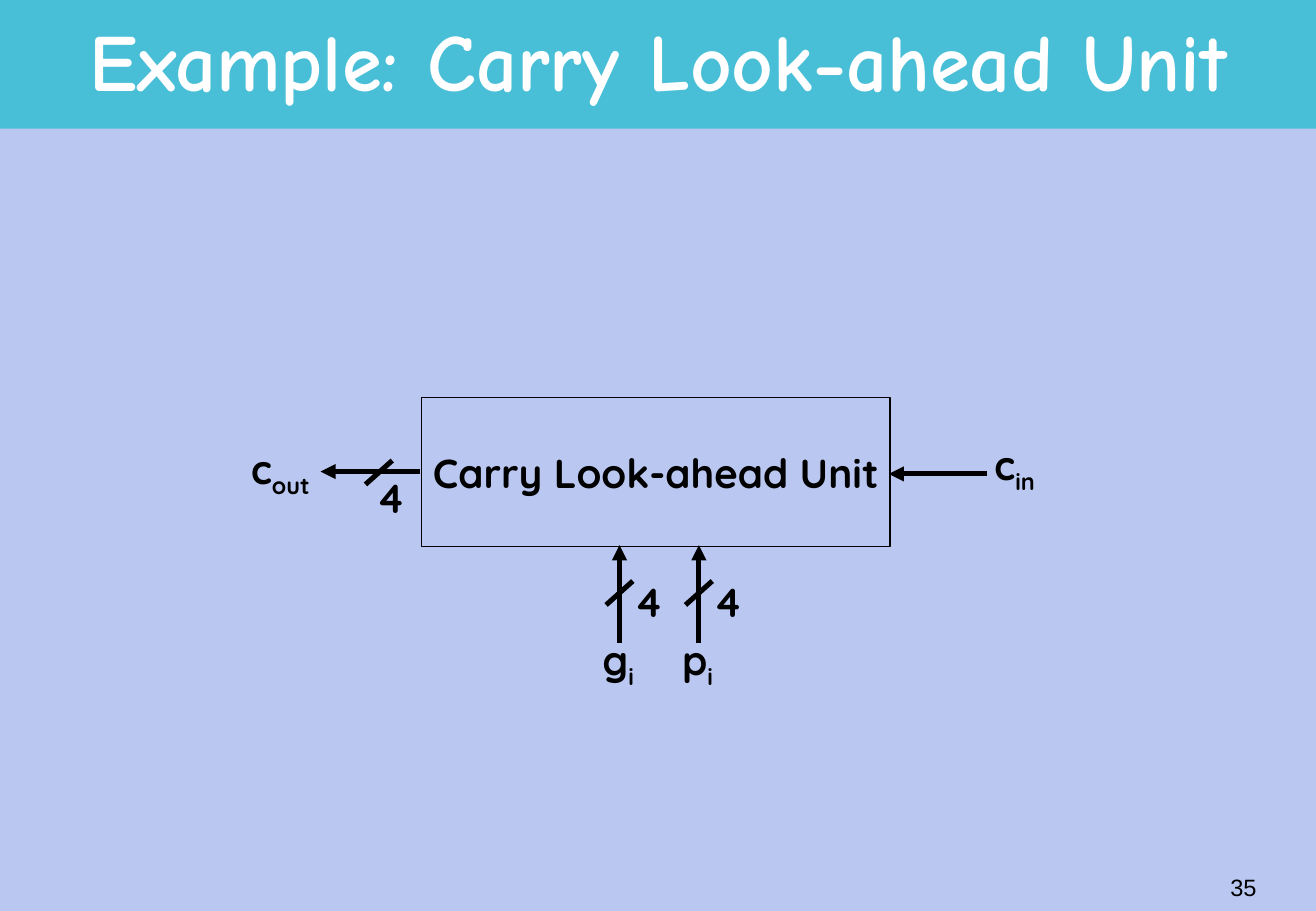
from lxml import etree
from pptx import Presentation
from pptx.dml.color import RGBColor
from pptx.enum.shapes import MSO_CONNECTOR, MSO_SHAPE
from pptx.enum.text import MSO_ANCHOR, PP_ALIGN
from pptx.oxml.ns import qn
from pptx.util import Cm, Pt

STRAIGHT = MSO_CONNECTOR.STRAIGHT
RECTANGLE = MSO_SHAPE.RECTANGLE
TOP, MIDDLE = MSO_ANCHOR.TOP, MSO_ANCHOR.MIDDLE
LEFT, CENTER, RIGHT = PP_ALIGN.LEFT, PP_ALIGN.CENTER, PP_ALIGN.RIGHT

COLORS = {"background": "BAC8F1", "banner": "49BFD7", "ink": "000000", "title": "FFFFFF"}
SLIDE_WIDTH, SLIDE_HEIGHT = 27.51, 19.05
LABEL_HEIGHT = 1.4
DIGIT_WIDTH = 1.02


def color(name):
    return RGBColor.from_string(COLORS[name])


def write_text(shape, text, subscript="", size=24, font="Quicksand", ink="ink", bold=True,
               align=LEFT, anchor=TOP, wrap=False, spacing=None):
    frame = shape.text_frame
    frame.word_wrap = wrap
    frame.vertical_anchor = anchor
    paragraph = frame.paragraphs[0]
    paragraph.alignment = align
    if spacing:
        paragraph.line_spacing = spacing
    for content, baseline in ((text, None), (subscript, "-25000")):
        if not content:
            continue
        run = paragraph.add_run()
        run.text = content
        run.font.size = Pt(size)
        run.font.name = font
        run.font.bold = bold
        run.font.color.rgb = color(ink)
        if baseline:
            run._r.get_or_add_rPr().set("baseline", baseline)


def add_text(slide, left, top, width, height, text, **text_format):
    shape = slide.shapes.add_textbox(Cm(left), Cm(top), Cm(width), Cm(height))
    write_text(shape, text, **text_format)


def add_rectangle(slide, left, top, width, height, fill, line=None):
    shape = slide.shapes.add_shape(RECTANGLE, Cm(left), Cm(top), Cm(width), Cm(height))
    shape.shadow.inherit = False
    shape.fill.solid()
    shape.fill.fore_color.rgb = color(fill)
    if line:
        shape.line.color.rgb = color(line)
        shape.line.width = Pt(1)
    else:
        shape.line.fill.background()
    return shape


def add_line(slide, start_x, start_y, end_x, end_y, arrow=False):
    connector = slide.shapes.add_connector(
        STRAIGHT, Cm(start_x), Cm(start_y), Cm(end_x), Cm(end_y))
    connector.line.color.rgb = color("ink")
    connector.line.width = Pt(3)
    properties = connector._element.spPr
    if arrow:
        etree.SubElement(properties.find(qn("a:ln")), qn("a:tailEnd"), type="triangle")
    etree.SubElement(properties, qn("a:effectLst"))


def add_bus_mark(slide, x, y, digit_left, digit_top):
    """Draw the slash across a bus and the number of its wires."""
    add_line(slide, x + 0.28, y - 0.25, x - 0.28, y + 0.25)
    add_text(slide, digit_left, digit_top, DIGIT_WIDTH, LABEL_HEIGHT, "4")


def add_banner(slide, left, top, width, height):
    add_rectangle(slide, left, top, width, height, "banner")
    add_text(slide, left, top + 0.13, width, height - 0.18, "Example: Carry Look-ahead Unit",
             size=48, font="Comic Neue", ink="title", align=CENTER, anchor=MIDDLE,
             wrap=True, spacing=0.85)


def add_bottom_input(slide, x, bottom, name):
    add_line(slide, x, bottom + 2.01, x, bottom - 0.03, arrow=True)
    add_bus_mark(slide, x, bottom + 0.97, x + 0.06, bottom + 0.51)
    add_text(slide, x - 0.6, bottom + 1.73, 1.24, LABEL_HEIGHT, name, subscript="i")


def add_carry_unit(slide, left, top, width, height):
    """Draw the unit in the given box with its inputs and output around it."""
    right, bottom = left + width, top + height
    unit = add_rectangle(slide, left, top, width, height, "background", line="ink")
    write_text(unit, "Carry Look-ahead Unit", align=CENTER, anchor=MIDDLE)

    add_line(slide, right + 2.03, top + 1.6, right - 0.03, top + 1.6, arrow=True)
    add_text(slide, right + 1.93, top + 0.76, 1.57, LABEL_HEIGHT, "c", subscript="in")

    add_line(slide, left - 0.03, top + 1.55, left - 2.11, top + 1.55, arrow=True)
    add_bus_mark(slide, left - 0.89, top + 1.57, left - 1.19, top + 1.45)
    add_text(slide, left - 3.81, top + 0.84, 1.98, LABEL_HEIGHT, "c", subscript="out")

    for name, offset in (("g", 4.14), ("p", 5.8)):
        add_bottom_input(slide, left + offset, bottom, name)


def add_page_number(slide, left, top, width, height):
    add_text(slide, left, top, width, height, "35", size=14, font="Arial", bold=False,
             align=RIGHT, anchor=MIDDLE)


def main():
    presentation = Presentation()
    presentation.slide_width = Cm(SLIDE_WIDTH)
    presentation.slide_height = Cm(SLIDE_HEIGHT)
    slide = presentation.slides.add_slide(presentation.slide_layouts[6])
    slide.background.fill.solid()
    slide.background.fill.fore_color.rgb = color("background")
    add_banner(slide, 0, 0, SLIDE_WIDTH, 2.69)
    add_carry_unit(slide, 8.81, 8.31, 9.8, 3.12)
    add_page_number(slide, 20.78, 17.91, 5.74, 1.27)
    presentation.save("out.pptx")


if __name__ == "__main__":
    main()
